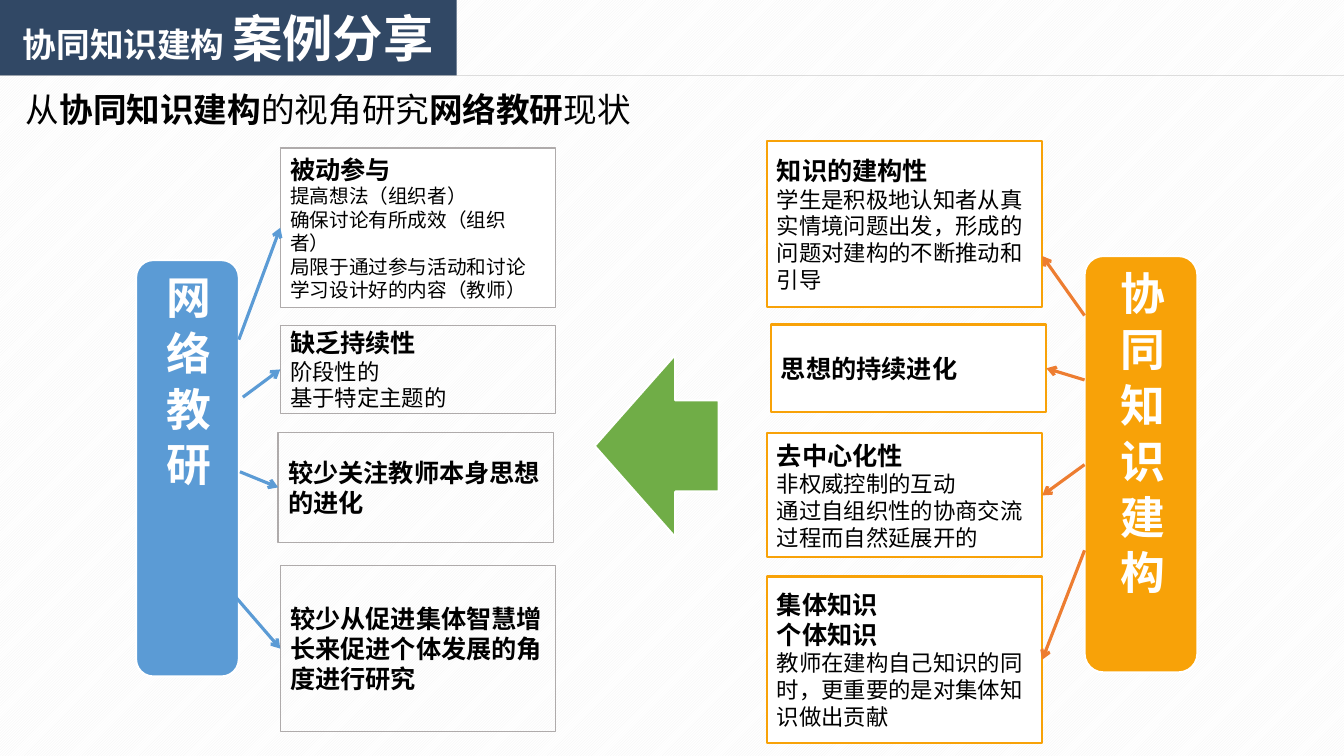
from lxml.etree import SubElement
from pptx import Presentation
from pptx.dml.color import RGBColor
from pptx.enum.dml import MSO_PATTERN
from pptx.enum.shapes import MSO_CONNECTOR as CONNECTOR, MSO_SHAPE as SHAPE
from pptx.enum.text import MSO_ANCHOR as ANCHOR, PP_ALIGN as ALIGN
from pptx.oxml.ns import qn
from pptx.util import Pt

FONT = "Noto Sans CJK SC"
WHITE, BLACK = "FFFFFF", "000000"
NAVY, BLUE, AMBER, ORANGE, GREEN = "314865", "5B9BD5", "F8A208", "ED7D31", "70AD47"
GREY, RULE_GREY = "AFABAB", "BFBFBF"
SLIDE_WIDTH, SLIDE_HEIGHT = 960, 540
BOX_WIDTH = 196.6
TOP, LEFT, RIGHT = 0, 1, 3


def color(hex_code):
    return RGBColor.from_string(hex_code)


def add_text(paragraph, text, size=18, bold=False, hex_code=BLACK):
    run = paragraph.add_run()
    run.text = text
    font = run.font
    font.name, font.size, font.bold = FONT, Pt(size), bold
    font.color.rgb = color(hex_code)
    SubElement(run._r.get_or_add_rPr(), qn("a:ea")).set("typeface", FONT)


def add_block(slide, kind, box, fill=None, line=None, line_width=1.5):
    shape = slide.shapes.add_shape(kind, *map(Pt, box))
    shape.shadow.inherit = False
    if fill:
        shape.fill.solid()
        shape.fill.fore_color.rgb = color(fill)
    else:
        shape.fill.background()
    if line:
        shape.line.color.rgb = color(line)
        shape.line.width = Pt(line_width)
    else:
        shape.line.fill.background()
    shape.text_frame.word_wrap = True
    shape.text_frame.vertical_anchor = ANCHOR.MIDDLE
    return shape


def add_line(slide, start, end, hex_code, width):
    line = slide.shapes.add_connector(CONNECTOR.STRAIGHT, *map(Pt, start + end))
    line.line.color.rgb = color(hex_code)
    line.line.width = Pt(width)
    SubElement(line._element.spPr, qn("a:effectLst"))
    return line


def add_arrow(slide, start, end, hex_code):
    arrow = add_line(slide, start, end, hex_code, 2.25)
    SubElement(arrow.line._get_or_add_ln(), qn("a:tailEnd")).set("type", "arrow")
    return arrow


def add_header(slide, box):
    left, top, width, height = box
    banner = add_block(slide, SHAPE.RECTANGLE, box, NAVY)
    paragraph = banner.text_frame.paragraphs[0]
    paragraph.alignment = ALIGN.CENTER
    add_text(paragraph, "协同知识建构 ", size=24, bold=True, hex_code=WHITE)
    add_text(paragraph, "案例分享", size=36, bold=True, hex_code=WHITE)
    bottom = top + height
    rule = add_line(slide, (left, bottom), (SLIDE_WIDTH, bottom), RULE_GREY, 0.5)
    rule_color = rule.line._get_or_add_ln().find(".//" + qn("a:srgbClr"))
    SubElement(rule_color, qn("a:alpha")).set("val", "50000")


def add_title(slide, box):
    frame = slide.shapes.add_textbox(*map(Pt, box)).text_frame
    frame.word_wrap = True
    paragraph = frame.paragraphs[0]
    paragraph.line_spacing = 0.9
    parts = ["从", "协同知识建构", "的视角研究", "网络教研", "现状"]
    for index, part in enumerate(parts):
        add_text(paragraph, part, size=24, bold=index % 2 == 1)


def add_pillar(slide, box, text, fill):
    pillar = add_block(slide, SHAPE.ROUNDED_RECTANGLE, box, fill, WHITE)
    pillar.text_frame._txBody.bodyPr.set("vert", "eaVert")
    paragraph = pillar.text_frame.paragraphs[0]
    paragraph.alignment = ALIGN.CENTER
    add_text(paragraph, text, size=32, bold=True, hex_code=WHITE)


def add_card(slide, box, headings, details, detail_size, **style):
    card = add_block(slide, SHAPE.RECTANGLE, box, **style)
    lines = [(text, 18, True) for text in headings]
    lines += [(text, detail_size, False) for text in details]
    frame = card.text_frame
    for index, (text, size, bold) in enumerate(lines):
        paragraph = frame.add_paragraph() if index else frame.paragraphs[0]
        paragraph.alignment = ALIGN.LEFT
        add_text(paragraph, text, size=size, bold=bold)
    return card


def add_research_side(slide, left, top):
    """Pillar of online teaching research with its four findings."""
    add_pillar(slide, (left, top + 80, 73.4, 297.4), "网 络 教 研", BLUE)
    # indent, offset, height, fill, arrow start, headings, details, detail size
    cards = [
        (103, 0, 113.8, WHITE, (73.4, 136.8), ["被动参与"],
         ["提高想法（组织者）", "确保讨论有所成效（组织者）",
          "局限于通过参与活动和讨论学习设计好的内容（教师）"], 14),
        (103, 126.8, 62.6, None, (76.3, 177.9), ["缺乏持续性"],
         ["阶段性的", "基于特定主题的"], 16),
        (101.5, 203.1, 78.5, None, (74.2, 231.2), ["较少关注教师本身思想的进化"], [], 16),
        (103, 298.1, 118.8, None, (64.1, 312.5),
         ["较少从促进集体智慧增长来促进个体发展的角度进行研究"], [], 16),
    ]
    for indent, offset, height, fill, (x, y), headings, details, size in cards:
        box = (left + indent, top + offset, BOX_WIDTH, height)
        card = add_card(slide, box, headings, details, size,
                        fill=fill, line=GREY, line_width=1)
        tip = (box[0], box[1] + height / 2)
        add_arrow(slide, (left + x, top + y), tip, BLUE).end_connect(card, LEFT)


def add_knowledge_side(slide, left, top):
    """Pillar of collaborative knowledge building with its four principles."""
    pillar_left = left + 226.8
    add_pillar(slide, (pillar_left, top + 82.1, 80.6, 297.4), "协 同 知 识 建 构", AMBER)
    # indent, offset, height, arrow start, arrow tip if off centre, headings, details
    cards = [
        (0, 0, 118.8, 124.6, 82.1, ["知识的建构性"],
         ["学生是积极地认知者从真实情境问题出发，形成的问题对建构的不断推动和引导"]),
        (2.9, 131, 62.6, 170.6, None, ["思想的持续进化"], []),
        (0, 208.8, 88.6, 231.1, None, ["去中心化性"],
         ["非权威控制的互动", "通过自组织性的协商交流过程而自然延展开的"]),
        (0, 311, 118.8, 292.3, None, ["集体知识", "个体知识"],
         ["教师在建构自己知识的同时，更重要的是对集体知识做出贡献"]),
    ]
    for indent, offset, height, start, tip, headings, details in cards:
        box = (left + indent, top + offset, BOX_WIDTH, height)
        card = add_card(slide, box, headings, details, 16, fill=WHITE, line=AMBER)
        end = (box[0] + BOX_WIDTH, top + (tip or offset + height / 2))
        arrow = add_arrow(slide, (pillar_left, top + start), end, ORANGE)
        if tip is None:
            arrow.end_connect(card, RIGHT)


def add_center_arrow(slide, box):
    arrow = add_block(slide, SHAPE.LEFT_ARROW, box, GREEN, WHITE)
    arrow.adjustments[0] = 0.5
    arrow.adjustments[1] = 0.65


def main():
    presentation = Presentation()
    presentation.slide_width = Pt(SLIDE_WIDTH)
    presentation.slide_height = Pt(SLIDE_HEIGHT)
    slide = presentation.slides.add_slide(presentation.slide_layouts[6])
    background = slide.background.fill
    background.patterned()
    background.pattern = MSO_PATTERN.DARK_UPWARD_DIAGONAL
    background.fore_color.rgb = color("F2F2F2")
    background.back_color.rgb = color(WHITE)

    add_header(slide, (0, 0, 326.2, 54))
    add_title(slide, (11.5, 63.4, 864, 42.5))
    add_research_side(slide, 97.2, 105.8)
    add_center_arrow(slide, (424.8, 253.4, 88.6, 130.3))
    add_knowledge_side(slide, 547.9, 100.8)
    presentation.save("out.pptx")


if __name__ == "__main__":
    main()
